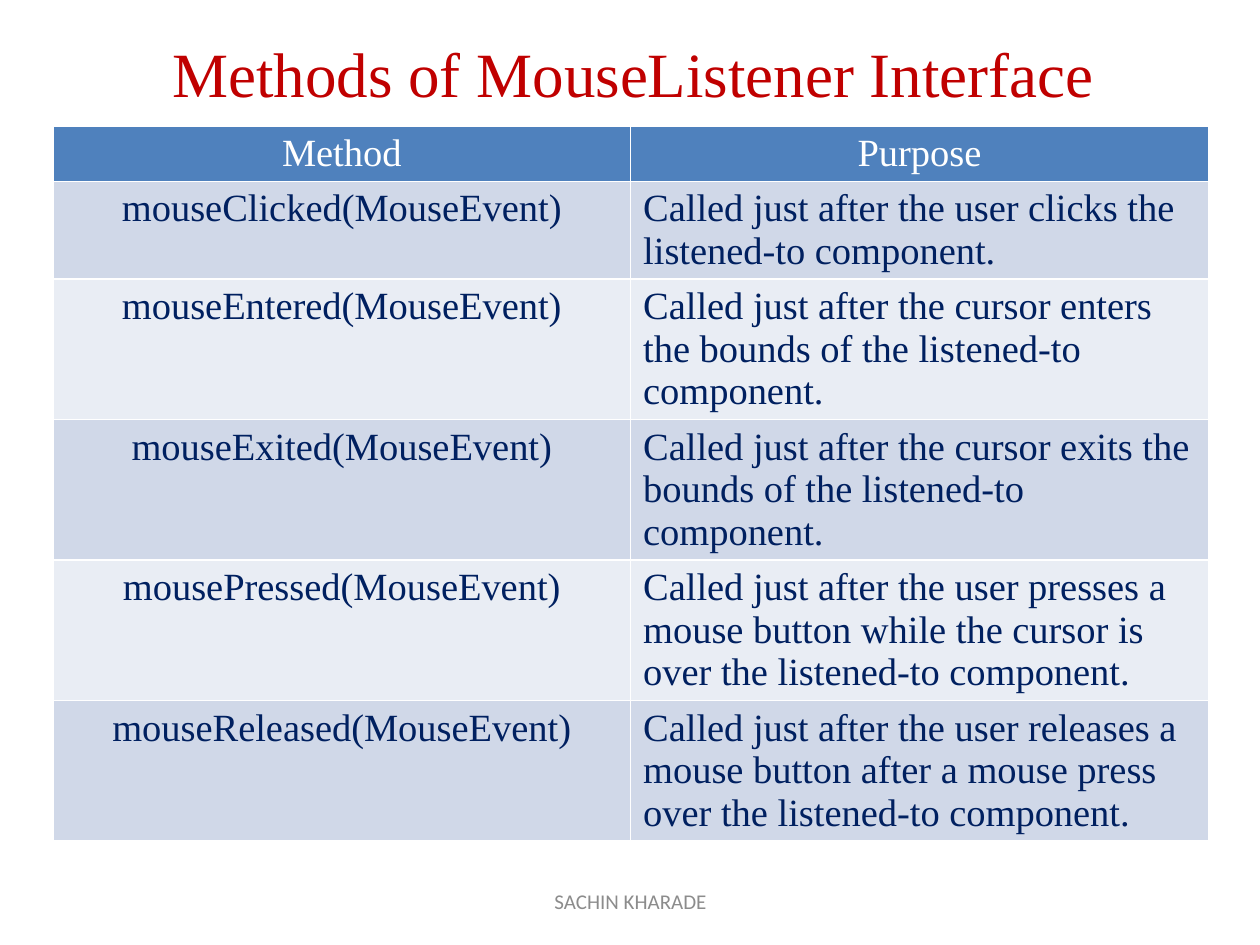
from pptx import Presentation
from pptx.dml.color import RGBColor
from pptx.enum.text import MSO_ANCHOR as Anchor, PP_ALIGN as Align
from pptx.util import Inches, Pt

TITLE = "Methods of MouseListener Interface"
FOOTER = "SACHIN KHARADE"
ROWS = [
    ("Method", "Purpose"),
    ("mouseClicked(MouseEvent)",
     "Called just after the user clicks the listened-to component."),
    ("mouseEntered(MouseEvent)",
     "Called just after the cursor enters the bounds of the listened-to component."),
    ("mouseExited(MouseEvent)",
     "Called just after the cursor exits the bounds of the listened-to component."),
    ("mousePressed(MouseEvent)",
     "Called just after the user presses a mouse button while the cursor is over "
     "the listened-to component."),
    ("mouseReleased(MouseEvent)",
     "Called just after the user releases a mouse button after a mouse press over "
     "the listened-to component."),
]
HEADER_FILL = "4F81BD"
BAND_FILLS = ["D0D8E8", "E9EDF4"]
ROW_HEIGHT = 0.41
SERIF = {"name": "Times New Roman", "bold": False}
TITLE_FONT = {**SERIF, "size": Pt(36)}
CELL_FONT = {**SERIF, "size": Pt(22)}
FOOTER_FONT = {"name": "Calibri", "size": Pt(12)}


def color(hex_code):
    return RGBColor.from_string(hex_code)


def write(frame, text, font, hex_code, align):
    para = frame.paragraphs[0]
    para.alignment = align
    span = para.add_run()
    span.text = text
    for name, value in font.items():
        setattr(span.font, name, value)
    span.font.color.rgb = color(hex_code)


def place(shape, left, top, width, height):
    bounds = {"left": left, "top": top, "width": width, "height": height}
    for name, value in bounds.items():
        setattr(shape, name, Inches(value))


def add_methods_table(page):
    size = [Inches(v) for v in (0.42, 1, 9.17, ROW_HEIGHT * len(ROWS))]
    table = page.shapes.add_table(len(ROWS), len(ROWS[0]), *size).table
    for r, row in enumerate(ROWS):
        header = r == 0
        fill = HEADER_FILL if header else BAND_FILLS[(r - 1) % 2]
        ink = "FFFFFF" if header else "002060"
        for c, text in enumerate(row):
            cell = table.cell(r, c)
            cell.fill.solid()
            cell.fill.fore_color.rgb = color(fill)
            align = Align.CENTER if header or c == 0 else Align.LEFT
            write(cell.text_frame, text, CELL_FONT, ink, align)


def main():
    deck = Presentation()
    deck.slide_width, deck.slide_height = Inches(10), Inches(7.5)
    page = deck.slides.add_slide(deck.slide_layouts[5])

    title = page.shapes.title
    place(title, 0.55, 0, 8.95, 1.15)
    title.text_frame.vertical_anchor = Anchor.MIDDLE
    write(title.text_frame, TITLE, TITLE_FONT, "C00000", Align.CENTER)

    add_methods_table(page)

    footer = page.shapes.add_textbox(0, 0, 0, 0)
    place(footer, 3.42, 6.95, 3.17, 0.4)
    footer.text_frame.word_wrap = True
    footer.text_frame.vertical_anchor = Anchor.MIDDLE
    write(footer.text_frame, FOOTER, FOOTER_FONT, "8C8C8C", Align.CENTER)

    deck.save("out.pptx")


if __name__ == "__main__":
    main()
